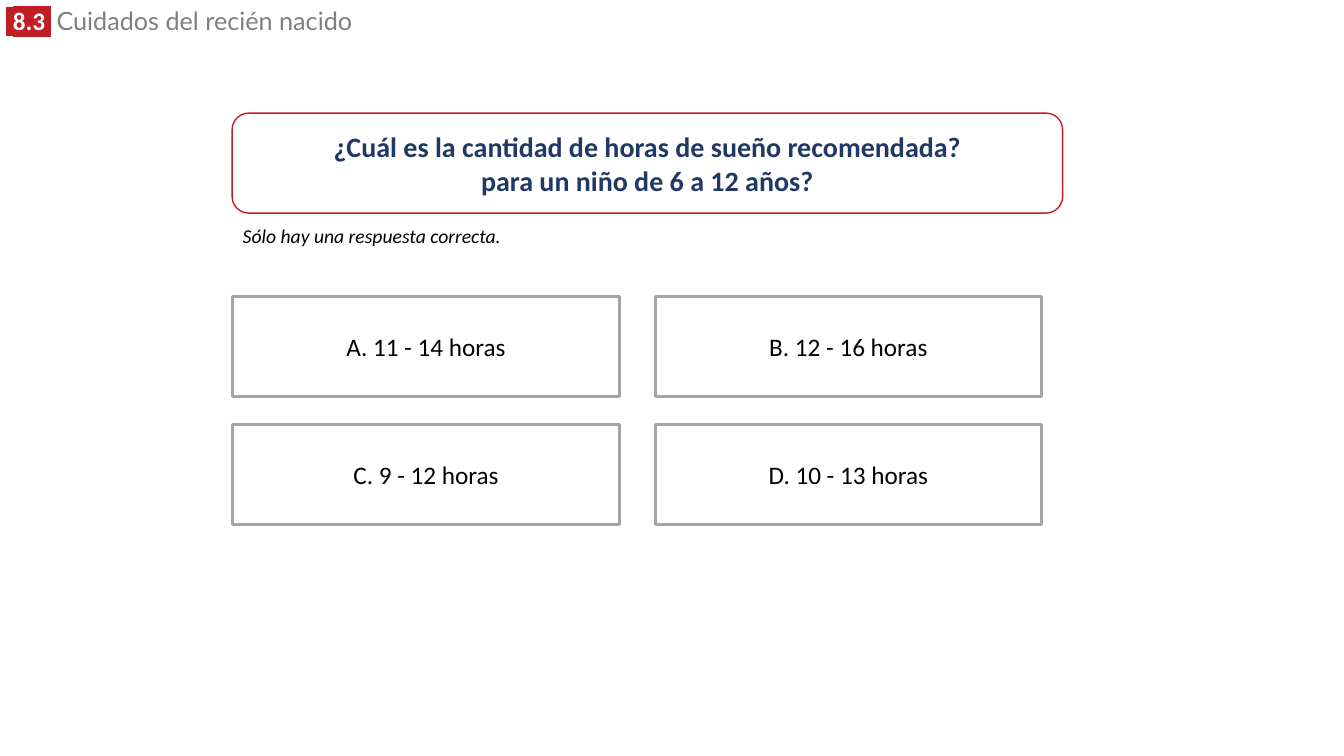
from lxml.etree import Element, SubElement
from pptx import Presentation
from pptx.dml.color import RGBColor
from pptx.enum.shapes import MSO_SHAPE as Shape
from pptx.enum.text import MSO_ANCHOR as Anchor, MSO_AUTO_SIZE as AutoSize, PP_ALIGN as Align
from pptx.oxml.ns import qn
from pptx.util import Pt

RED, NAVY, GRAY = "C01E24", "203864", "7F7F7F"
WHITE, BLACK, BORDER = "FFFFFF", "000000", "A5A5A5"


def color(value):
    """Turn a hex string into a colour."""
    return RGBColor.from_string(value)


def style(font, size, text_color, name="Calibri", bold=False, italic=False):
    """Set the look of a run's or paragraph's font."""
    font.name, font.size, font.bold, font.italic = name, Pt(size), bold, italic
    font.color.rgb = color(text_color)


def highlight(run, value):
    """Put a coloured background behind a run."""
    mark = Element(qn("a:highlight"))
    SubElement(mark, qn("a:srgbClr"), val=value)
    run.font._element.find(qn("a:solidFill")).addnext(mark)


def add_label(slide, left, top, width, height):
    """Add a wrapping text box and return its first paragraph."""
    frame = slide.shapes.add_textbox(Pt(left), Pt(top), Pt(width), Pt(height)).text_frame
    frame.word_wrap = True
    frame.auto_size = AutoSize.SHAPE_TO_FIT_TEXT
    return frame.paragraphs[0]


def add_heading(slide, number, title):
    """Add the section number on its red mark, followed by the title."""
    heading = add_label(slide, -2.9, 4.3, 332, 24.5)
    heading.line_spacing = 0.8
    for text, name, text_color, marked in (
        (" ", "Arial", WHITE, True),
        (f"{number} ", "Calibri", WHITE, True),
        (" ", "Calibri", GRAY, False),
        (title, "Lato", GRAY, False),
    ):
        run = heading.add_run()
        run.text = text
        style(run.font, 18, text_color, name, bold=marked)
        if marked:
            highlight(run, RED)


def add_box(slide, kind, bounds, lines, border, border_width, **font):
    """Add a white outlined box with centred lines of text."""
    box = slide.shapes.add_shape(kind, *map(Pt, bounds))
    box.shadow.inherit = False
    box.fill.solid()
    box.fill.fore_color.rgb = color(WHITE)
    box.line.color.rgb = color(border)
    box.line.width = Pt(border_width)
    frame = box.text_frame
    frame.word_wrap = True
    frame.vertical_anchor = Anchor.MIDDLE
    frame.text = "\n".join(lines)
    for paragraph in frame.paragraphs:
        paragraph.alignment = Align.CENTER
        style(paragraph.font, **font)


def add_answers(slide, answers):
    """Lay the answers out in two columns."""
    for index, answer in enumerate(answers):
        row, column = divmod(index, 2)
        bounds = (166.3 + 301.7 * column, 211.6 + 91.5 * row, 276, 71.5)
        add_box(slide, Shape.RECTANGLE, bounds, [answer], BORDER, 2, size=18, text_color=BLACK)


def main():
    """Build the quiz slide and save it."""
    deck = Presentation()
    deck.slide_width, deck.slide_height = Pt(960), Pt(540)
    slide = deck.slides.add_slide(deck.slide_layouts[6])
    add_heading(slide, "8.3", "Cuidados del recién nacido")
    question = ["¿Cuál es la cantidad de horas de sueño recomendada?", "para un niño de 6 a 12 años?"]
    add_box(slide, Shape.ROUNDED_RECTANGLE, (165.8, 80.8, 593.3, 71.5), question, RED, 1,
            size=20, text_color=NAVY, bold=True)
    hint = add_label(slide, 166.3, 156.3, 232, 24.5)
    hint.text = "Sólo hay una respuesta correcta."
    style(hint.font, 14, BLACK, italic=True)
    add_answers(slide, ["A. 11 - 14 horas", "B. 12 - 16 horas", "C. 9 - 12 horas", "D. 10 - 13 horas"])
    deck.save("out.pptx")


if __name__ == "__main__":
    main()
